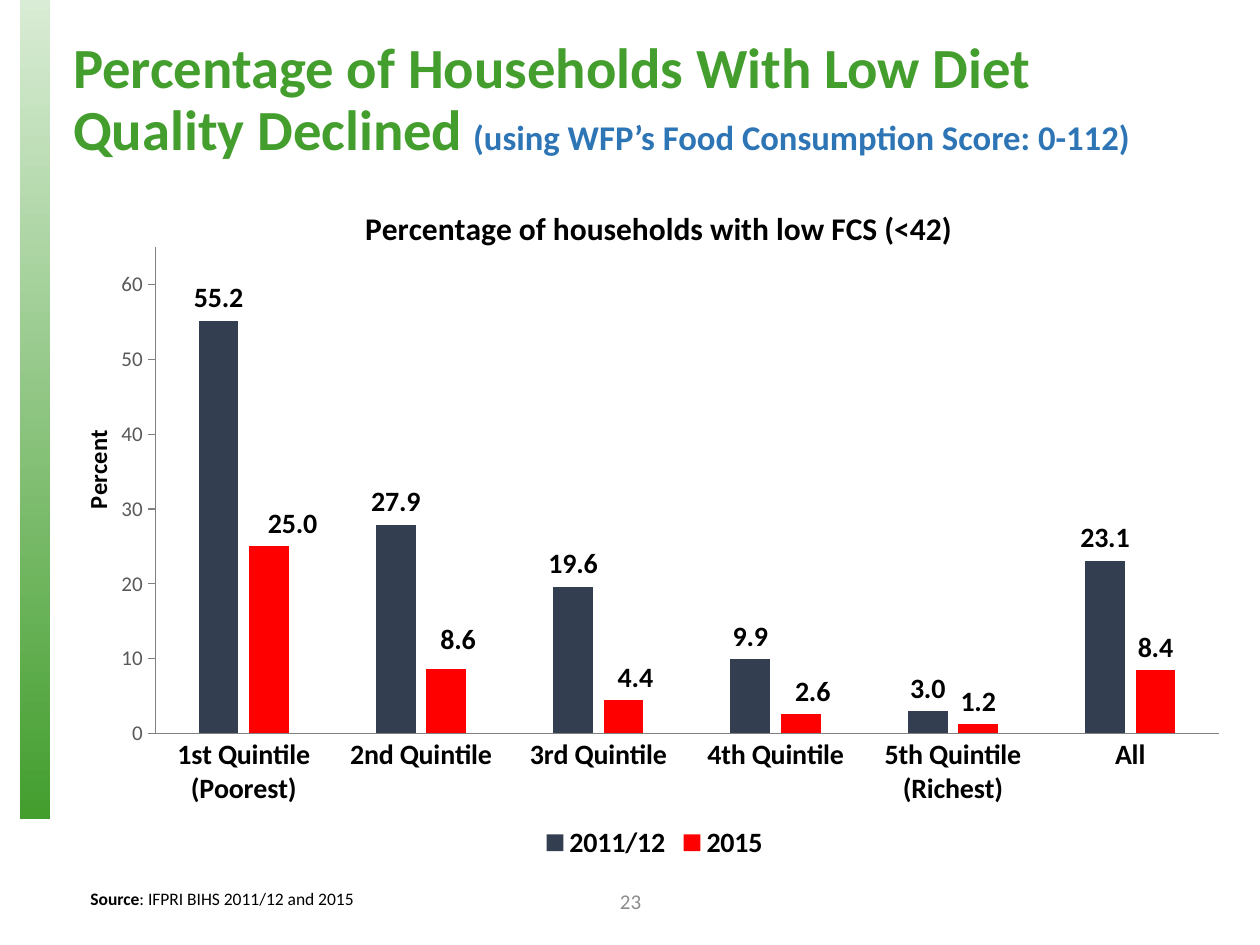
from lxml.etree import SubElement
from pptx import Presentation
from pptx.chart.data import CategoryChartData
from pptx.dml.color import RGBColor
from pptx.enum.chart import XL_CHART_TYPE as Kind, XL_LABEL_POSITION as Spot
from pptx.enum.chart import XL_LEGEND_POSITION as Side, XL_TICK_MARK as Tick
from pptx.enum.shapes import MSO_SHAPE as Form
from pptx.enum.text import MSO_ANCHOR as Anchor, PP_ALIGN as Align
from pptx.oxml.ns import qn
from pptx.util import Inches, Pt

WIDE, TALL = Inches(10), Inches(7.5)
GREEN, BLACK, GREY = "439E2E", "000000", "808080"
FONT = "Calibri"
CATS = ["1st Quintile\n(Poorest)", "2nd Quintile", "3rd Quintile",
        "4th Quintile", "5th Quintile\n(Richest)", "All"]
SERIES = [
    ("2011/12", "333F50", (55.2, 27.9, 19.6, 9.9, 3.0, 23.1), ()),
    ("2015", "FF0000", (25.0, 8.6, 4.4, 2.6, 1.2, 8.4),
     ((0.02, 0), (0.01, -0.01), (0.01, 0), (0.01, 0))),
]


def color(code):
    """Turn a hex string into a colour."""
    return RGBColor.from_string(code)


def area(x, y, w, h):
    """Turn percentages of the slide into a box."""
    return [int(size * part / 100)
            for size, part in ((WIDE, x), (TALL, y), (WIDE, w), (TALL, h))]


def style(font, size, code=BLACK, bold=False):
    """Set the face, size, colour and weight of a font."""
    font.name, font.size, font.bold = FONT, Pt(size), bold
    font.color.rgb = color(code)


def write(para, text, size, code=BLACK, bold=False):
    """Add one styled run to a paragraph."""
    run = para.add_run()
    run.text = text
    style(run.font, size, code, bold)


def layout(node, index, edge=True, inner=False, **parts):
    """Give a chart part a manual layout in shares of the chart."""
    old = node.find(qn("c:layout"))
    if old is not None:
        node.remove(old)
    outer = SubElement(node, qn("c:layout"))
    node.insert(index, outer)
    manual = SubElement(outer, qn("c:manualLayout"))
    if inner:
        SubElement(manual, qn("c:layoutTarget"), val="inner")
    if edge:
        for key in "xy":
            SubElement(manual, qn(f"c:{key}Mode"), val="edge")
    for key, share in parts.items():
        SubElement(manual, qn(f"c:{key}"), val=str(share))


def caption(title, text, size, x, y):
    """Write a chart or axis title at the given place."""
    write(title.text_frame.paragraphs[0], text, size, bold=True)
    layout(title._element, 1, x=x, y=y)


def band(slide, box):
    """Draw the fading side band."""
    shape = slide.shapes.add_shape(Form.RECTANGLE, *box)
    shape.shadow.inherit = False
    shape.line.fill.background()
    shape.fill.gradient()
    shape.fill.gradient_angle = 270
    for stop, code in zip(shape.fill.gradient_stops, ("D9ECD5", GREEN)):
        stop.color.rgb = color(code)


def head(slide, box):
    """Place the slide title."""
    title = slide.shapes.title
    title.left, title.top, title.width, title.height = box
    frame = title.text_frame
    frame.word_wrap, frame.vertical_anchor = True, Anchor.MIDDLE
    para = frame.paragraphs[0]
    para.alignment, para.line_spacing = Align.LEFT, 0.9
    write(para, "Percentage of Households With Low Diet Quality Declined",
          32.4, GREEN, True)
    write(para, " ", 26.1, GREEN, True)
    write(para, "(using WFP’s Food Consumption Score: 0-112)",
          19.8, "2E75B6", True)


def note(slide, box, runs, size, code=BLACK, align=Align.LEFT,
         anchor=Anchor.TOP):
    """Place a small line of text."""
    frame = slide.shapes.add_textbox(*box).text_frame
    frame.word_wrap, frame.vertical_anchor = True, anchor
    para = frame.paragraphs[0]
    para.alignment = align
    for text, bold in runs:
        write(para, text, size, code, bold)


def labels(series, shifts):
    """Label the columns and nudge the first few labels."""
    tags = series.data_labels
    tags.show_value, tags.position = True, Spot.OUTSIDE_END
    tags.number_format, tags.number_format_is_linked = "#,##0.0", False
    style(tags.font, 16, bold=True)
    for at in range(len(shifts)):
        tag = series.points[at].data_label
        style(tag.font, 16, bold=True)
        tag.position = Spot.OUTSIDE_END
    for node, (x, y) in zip(series._element.iter(qn("c:dLbl")), shifts):
        layout(node, 1, edge=False, x=x, y=y)
        form = SubElement(node, qn("c:numFmt"), formatCode="#,##0.0",
                          sourceLinked="0")
        node.insert(2, form)


def axes(chart):
    """Format both axes."""
    cat, val = chart.category_axis, chart.value_axis
    for axis, tick, size, code, bold in (
            (cat, Tick.NONE, 16, BLACK, True),
            (val, Tick.OUTSIDE, 12, "595959", False)):
        axis.has_major_gridlines = False
        axis.major_tick_mark, axis.minor_tick_mark = tick, Tick.NONE
        axis.format.line.color.rgb = color(GREY)
        axis.format.line.width = Pt(0.75)
        style(axis.tick_labels.font, size, code, bold)
    val.minimum_scale, val.maximum_scale, val.major_unit = 0, 65, 10
    val.tick_labels.number_format = "#,##0"
    val.tick_labels.number_format_is_linked = False
    caption(val.axis_title, "Percent", 14, 0.01, 0.37)


def graph(slide, box):
    """Build the column chart."""
    data = CategoryChartData(number_format="#,##0.0")
    data.categories = CATS
    for name, _, values, _ in SERIES:
        data.add_series(name, values)
    chart = slide.shapes.add_chart(Kind.COLUMN_CLUSTERED, *box, data).chart
    style(chart.font, 10)
    caption(chart.chart_title, "Percentage of households with low FCS (<42)",
            18, 0.25, 0.05)
    axes(chart)
    plot = chart.plots[0]
    plot.gap_width, plot.overlap, plot.vary_by_categories = 219, -27, False
    for series, (_, code, _, shifts) in zip(plot.series, SERIES):
        series.format.fill.solid()
        series.format.fill.fore_color.rgb = color(code)
        labels(series, shifts)
    chart.has_legend = True
    chart.legend.position = Side.BOTTOM
    chart.legend.include_in_layout = False
    style(chart.legend.font, 16, bold=True)
    layout(chart._chartSpace.chart.plotArea, 0, inner=True,
           x=0.077, y=0.116, w=0.901, h=0.695)


def main():
    """Build and save the slide."""
    deck = Presentation()
    deck.slide_width, deck.slide_height = WIDE, TALL
    slide = deck.slides.add_slide(deck.slide_layouts[5])
    band(slide, area(1.6, 0, 2.4, 86.7))
    head(slide, area(4.8, 3.7, 92.5, 14))
    graph(slide, area(5.1, 17.6, 93.7, 74))
    note(slide, area(6.2, 93.3, 72.7, 3.6),
         [("Source", True), (": IFPRI BIHS 2011/12 and 2015", False)], 10)
    note(slide, area(38.8, 92.7, 22.5, 5.3), [("23", False)], 12, "8C8C8C",
         Align.CENTER, Anchor.MIDDLE)
    deck.save("out.pptx")


if __name__ == "__main__":
    main()
